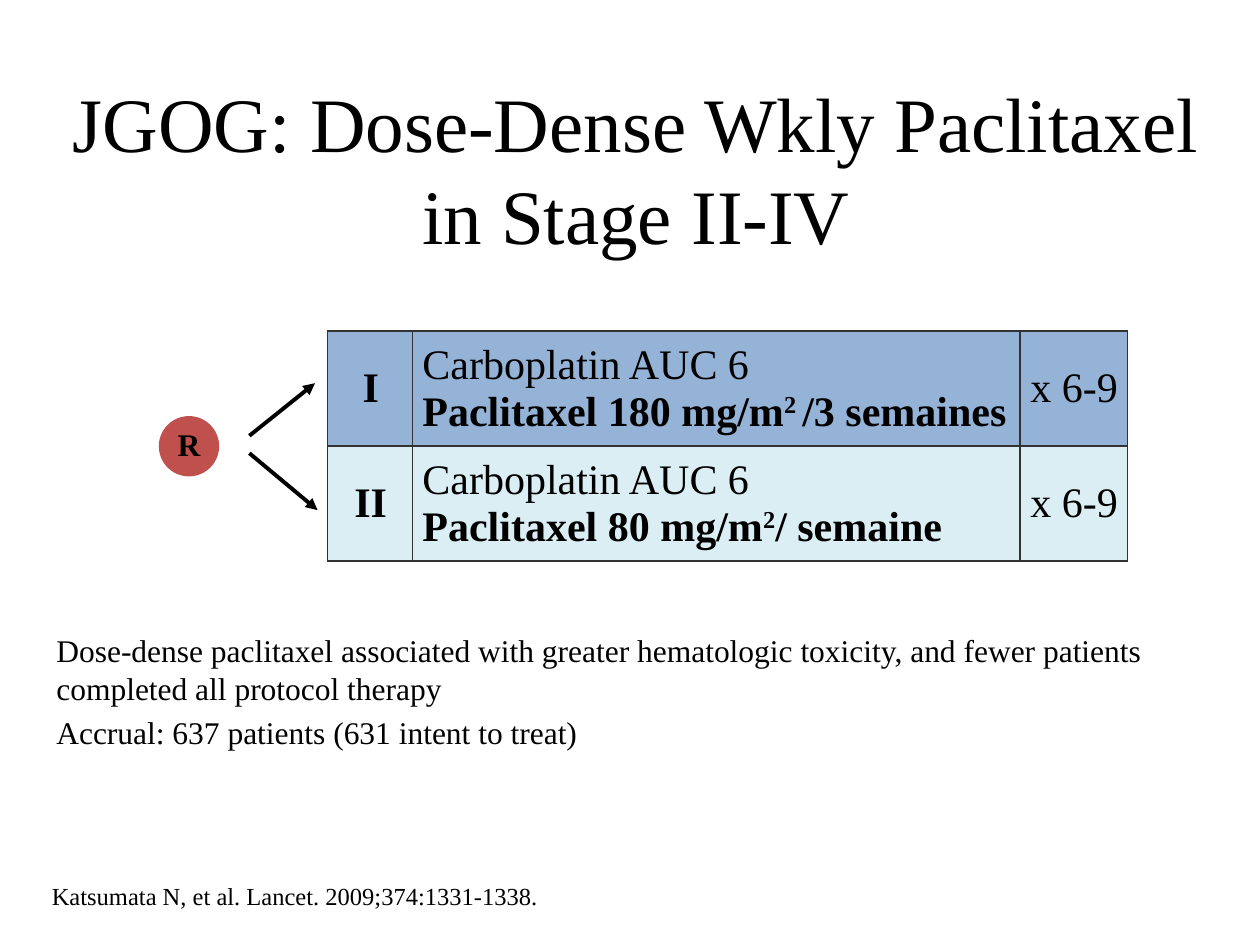
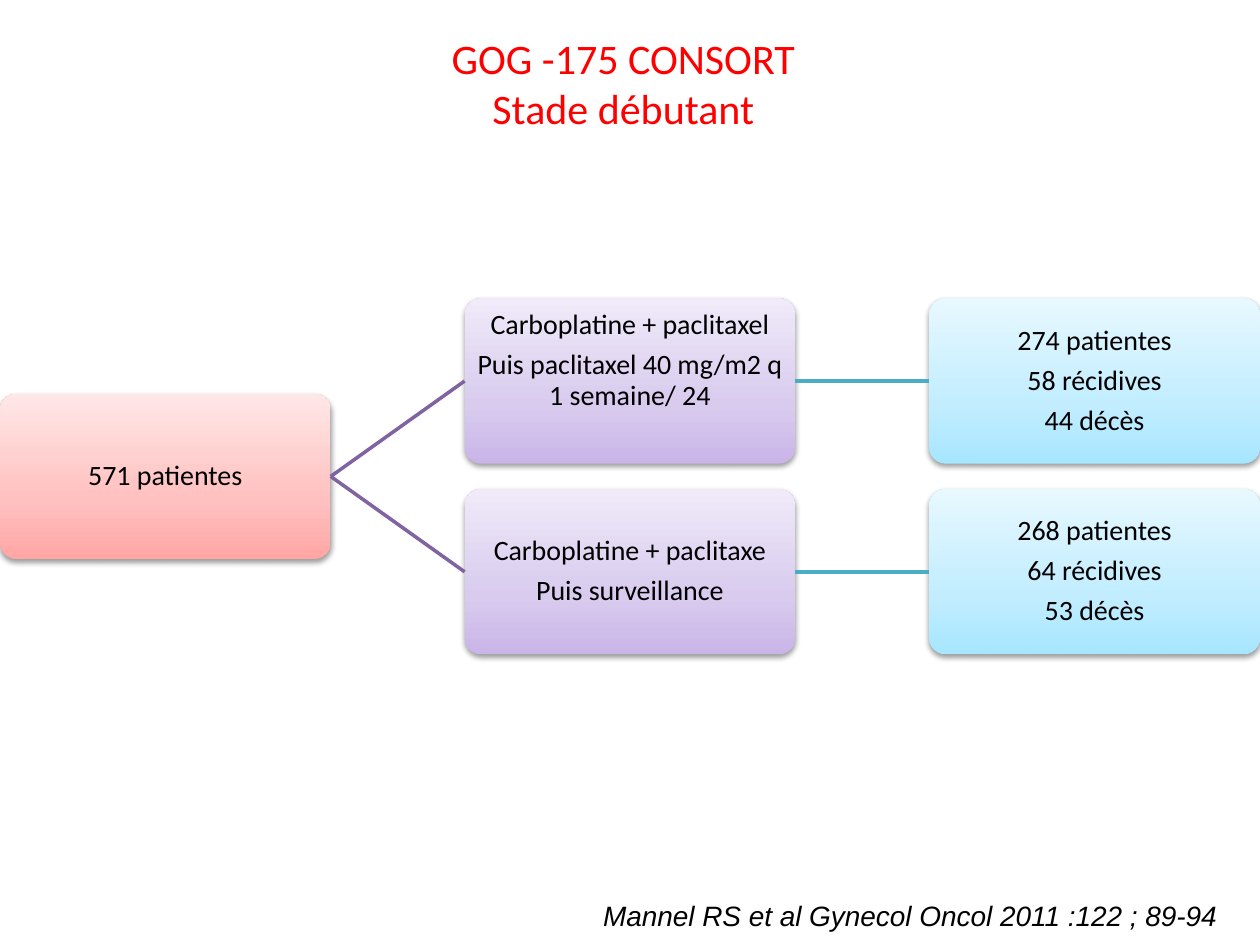
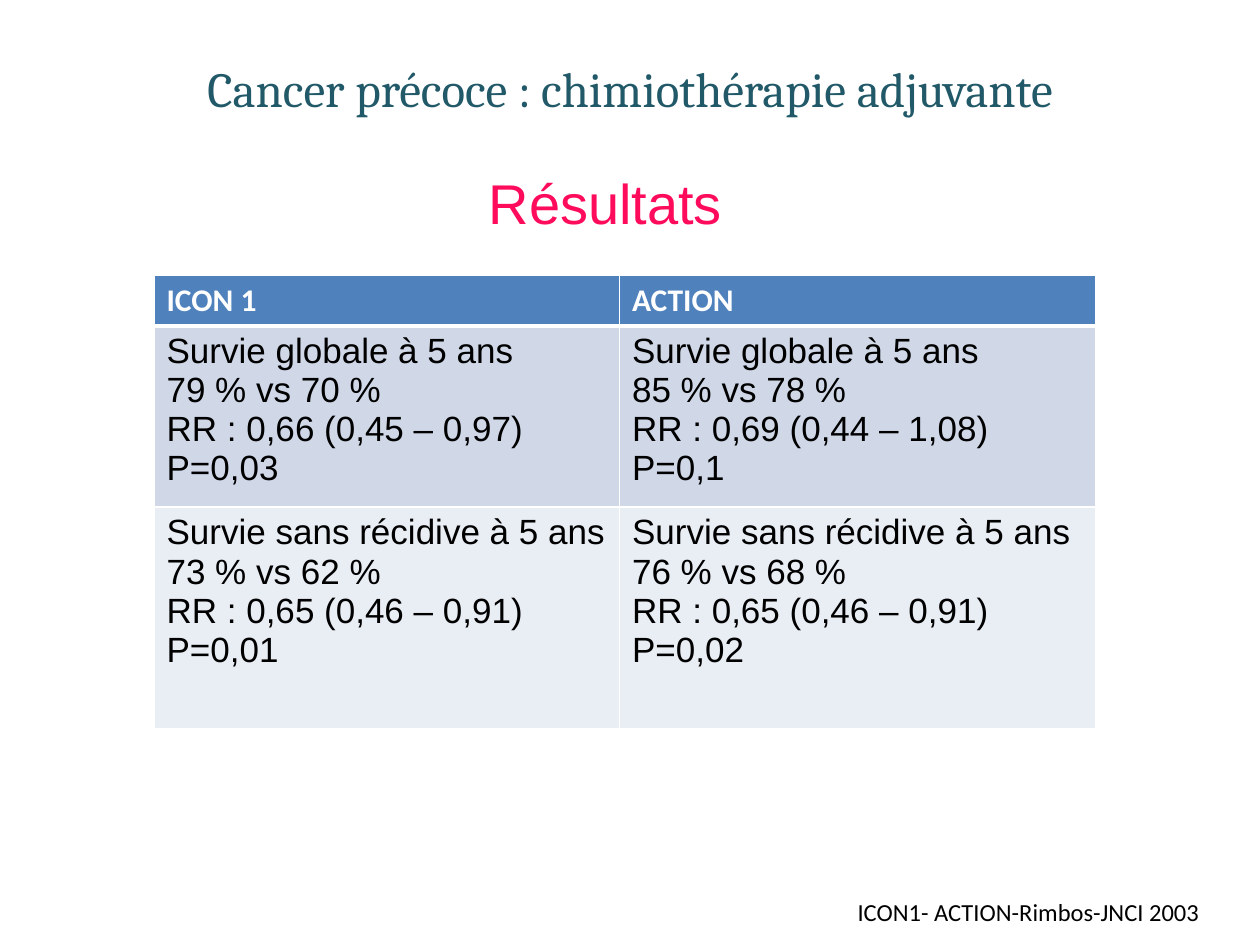
from lxml.etree import SubElement
from pptx import Presentation
from pptx.dml.color import RGBColor
from pptx.enum.shapes import MSO_CONNECTOR, MSO_SHAPE
from pptx.enum.text import MSO_ANCHOR, MSO_AUTO_SIZE, PP_ALIGN
from pptx.oxml import parse_xml
from pptx.oxml.ns import nsdecls, qn
from pptx.util import Pt

SERIF, SANS, PLAIN = "Times New Roman", "Arial", "Calibri"
BLACK, WHITE = "000000", "FFFFFF"
ROSE = ("FFA6A5", "FFC0BF", "FFE7E7")
LILAC = ("C9B5E8", "D8CBEE", "F0EAF9")
SKY = ("A7E6FF", "C1EDFF", "E7F8FF")
CENTER, LEFT = PP_ALIGN.CENTER, PP_ALIGN.LEFT
TOP, MIDDLE = MSO_ANCHOR.TOP, MSO_ANCHOR.MIDDLE


def hue(code):
    return RGBColor.from_string(code)


def write(frame, lines, size=18, face=SERIF, color=BLACK, bold=False,
          italic=False, align=LEFT, gap=0, lead=1.0):
    for i, line in enumerate(lines):
        para = frame.add_paragraph() if i else frame.paragraphs[0]
        para.alignment = align
        para.line_spacing = lead
        para.space_before = Pt(gap if i else 0)
        para.space_after = Pt(0)
        parts = [(line, bold, 0)] if isinstance(line, str) else line
        for text, heavy, lift in parts:
            if text == "\n":
                para.add_line_break()
                continue
            run = para.add_run()
            run.text = text
            font = run.font
            font.size, font.name = Pt(size), face
            font.bold, font.italic = heavy, italic
            font.color.rgb = hue(color)
            if lift:
                run._r.get_or_add_rPr().set("baseline", str(lift * 1000))


def inset(frame, left, top, right, bottom):
    frame.margin_left, frame.margin_top = Pt(left), Pt(top)
    frame.margin_right, frame.margin_bottom = Pt(right), Pt(bottom)


def edge(cell, sides):
    props = cell._tc.get_or_add_tcPr()
    for i, (side, (color, width)) in enumerate(sides.items()):
        props.insert(i, parse_xml(
            f'<a:ln{side} {nsdecls("a")} w="{Pt(width)}"><a:solidFill>'
            f'<a:srgbClr val="{color}"/></a:solidFill></a:ln{side}>'))


class Deck:
    def __init__(self):
        self.show = Presentation()
        self.show.slide_width, self.show.slide_height = Pt(720), Pt(540)

    def page(self, layout):
        self.slide = self.show.slides.add_slide(self.show.slide_layouts[layout])
        self.shapes = self.slide.shapes

    def place(self, shape, box, lines, anchor=TOP, **style):
        shape.left, shape.top, shape.width, shape.height = map(Pt, box)
        frame = shape.text_frame
        frame.auto_size = MSO_AUTO_SIZE.NONE
        frame.word_wrap = True
        frame.vertical_anchor = anchor
        write(frame, lines, **style)

    def title(self, box, lines, **style):
        self.place(self.shapes.title, box, lines, align=CENTER, **style)

    def body(self, box, lines, **style):
        shape = self.slide.placeholders[1]
        self.place(shape, box, lines, **style)
        for para in shape.text_frame.paragraphs:
            props = para._p.get_or_add_pPr()
            props.set("marL", "0")
            props.set("indent", "0")
            SubElement(props, qn("a:buNone"))

    def label(self, box, lines, **style):
        self.place(self.shapes.add_textbox(*map(Pt, box)), box, lines, **style)

    def disc(self, box, text, fill):
        shape = self.shapes.add_shape(MSO_SHAPE.OVAL, *map(Pt, box))
        shape.shadow.inherit = False
        shape.fill.solid()
        shape.fill.fore_color.rgb = hue(fill)
        shape.line.fill.background()
        inset(shape.text_frame, 0, 0, 0, 0)
        self.place(shape, box, [text], MIDDLE, bold=True, align=CENTER, lead=0.9)

    def card(self, box, lines, tones, foot=1):
        shape = self.shapes.add_shape(MSO_SHAPE.ROUNDED_RECTANGLE, *map(Pt, box))
        shape.adjustments[0] = 0.1
        shape.line.fill.background()
        shape.shadow.inherit = False
        props = shape._element.spPr
        stops = "".join(f'<a:gs pos="{pos}000"><a:srgbClr val="{tone}"/></a:gs>'
                        for pos, tone in zip((0, 35, 100), tones))
        props.find(qn("a:prstGeom")).addnext(parse_xml(
            f'<a:gradFill {nsdecls("a")} rotWithShape="1"><a:gsLst>{stops}</a:gsLst>'
            '<a:lin ang="16200000" scaled="0"/></a:gradFill>'))
        props.find(qn("a:effectLst")).append(parse_xml(
            f'<a:outerShdw {nsdecls("a")} blurRad="{Pt(3.1)}" dist="{Pt(1.6)}" '
            'dir="5400000" rotWithShape="0"><a:srgbClr val="000000">'
            '<a:alpha val="38000"/></a:srgbClr></a:outerShdw>'))
        inset(shape.text_frame, 1, 1, 1, foot)
        self.place(shape, box, lines, MIDDLE, size=16, face=PLAIN,
                   align=CENTER, gap=5.6, lead=0.9)
        return shape

    def line(self, ends, color, width, arrow=False):
        link = self.shapes.add_connector(MSO_CONNECTOR.STRAIGHT, *map(Pt, ends))
        link.line.color.rgb = hue(color)
        link.line.width = Pt(width)
        if arrow:
            SubElement(link.line._get_or_add_ln(), qn("a:tailEnd"), type="triangle")
        SubElement(link._element.spPr, qn("a:effectLst"))
        return link

    def join(self, start, stop, color):
        link = self.line((0, 0, 0, 0), color, 2)
        link.begin_connect(start, 3)
        link.end_connect(stop, 1)

    def table(self, spot, cols, rows):
        grid = self.shapes.add_table(len(rows), len(cols), *map(Pt, spot),
                                     Pt(sum(cols)), Pt(sum(rows))).table
        grid.first_row = grid.horz_banding = False
        for col, width in zip(grid.columns, cols):
            col.width = Pt(width)
        for row, height in zip(grid.rows, rows):
            row.height = Pt(height)
        return grid

    def fill(self, cell, lines, tone, sides, **style):
        cell.fill.solid()
        cell.fill.fore_color.rgb = hue(tone)
        edge(cell, sides)
        write(cell.text_frame, lines, **style)


def weekly(deck):
    deck.page(1)
    deck.title((30, 52.5, 667, 87), ["JGOG: Dose-Dense Wkly Paclitaxel in Stage II-IV"],
               size=44, anchor=MIDDLE)
    deck.body((25, 357, 666, 90), [
        "Dose-dense paclitaxel associated with greater hematologic toxicity, "
        "and fewer patients completed all protocol therapy",
        "Accrual: 637 patients (631 intent to treat)"], gap=3.6)
    deck.disc((90.75, 237.75, 34.5, 34.5), "R", "C0504D")
    for ends in ((142.5, 259, 181.5, 291.5), (142.5, 249, 180, 219)):
        deck.line(ends, BLACK, 2.25, arrow=True)
    arms = [
        ("I", "95B3D7", [("Paclitaxel 180 mg/m", True, 0), ("2 ", True, 30),
                         ("/3 semaines", True, 0)]),
        ("II", "DBEEF4", [("Paclitaxel 80 mg/m", True, 0), ("2", True, 30),
                          ("/ semaine", True, 0)])]
    grid = deck.table((187.25, 189.25), (48.5, 347, 61.5), (65.7, 65.7))
    sides = dict.fromkeys("LRTB", ("323235", 1))
    for r, (name, tone, dose) in enumerate(arms):
        drugs = [("Carboplatin AUC 6", False, 0), ("\n", False, 0)] + dose
        texts = ([(name, True, 0)], drugs, "x 6-9")
        for c, text in enumerate(texts):
            cell = grid.cell(r, c)
            inset(cell, 5.7, 5, 5, 5)
            cell.vertical_anchor = MIDDLE
            deck.fill(cell, [text], tone, sides, size=24,
                      align=LEFT if c == 1 else CENTER)
    deck.label((22.5, 502, 375, 26.5),
               ["Katsumata N, et al. Lancet. 2009;374:1331-1338."], size=14, lead=0.9)


def consort(deck):
    deck.page(5)
    deck.label((337.5, 510, 370, 26.5),
               ["Mannel RS et al Gynecol Oncol 2011 :122 ; 89-94"],
               size=16, face=SANS, italic=True)
    deck.title((229.5, 15, 253.5, 65.5), ["GOG -175 CONSORT", "Stade débutant"],
               size=24, face=PLAIN, color="FF0000")
    wide, high, top = 189, 94.5, 170.5
    across, down = 265.5, 109
    root = deck.card((0, top + down / 2, wide, high), ["571 patientes"], ROSE)
    arms = [
        (["Carboplatine + paclitaxel", "Puis paclitaxel 40 mg/m2 q 1 semaine/ 24"],
         ["274 patientes", "58 récidives", "44 décès"], 24),
        (["Carboplatine + paclitaxe", "Puis surveillance"],
         ["268 patientes", "64 récidives", "53 décès"], 1)]
    for i, (care, fate, foot) in enumerate(arms):
        y = top + i * down
        arm = deck.card((across, y, wide, high), care, LILAC, foot)
        end = deck.card((2 * across, y, wide, high), fate, SKY)
        deck.join(root, arm, "8064A2")
        deck.join(arm, end, "4BACC6")


def results(deck):
    deck.page(5)
    deck.label((483, 509, 230, 24), ["ICON1- ACTION-Rimbos-JNCI 2003"],
               size=14, face=PLAIN)
    deck.title((54, 30, 612, 47.5), ["Cancer précoce : chimiothérapie adjuvante"],
               size=28, face="Cambria", color="215968")
    deck.label((139, 93, 414, 46), ["Résultats"], size=32, face=SANS,
               color="FF0B5C", align=CENTER)
    overall, free = "Survie globale à 5 ans", "Survie sans récidive à 5 ans"
    head = dict(size=18, face=PLAIN, color=WHITE, bold=True)
    text = dict(size=20, face=SANS)
    rows = [
        ("4F81BD", head, 1, 3, [["ICON 1"], ["ACTION"]]),
        ("D0D8E8", text, 3, 1, [
            [overall, "79 % vs 70 %", "RR : 0,66 (0,45 – 0,97)", "P=0,03"],
            [overall, "85 % vs 78 %", "RR : 0,69 (0,44 – 1,08)", "P=0,1"]]),
        ("E9EDF4", text, 1, 1, [
            [free, "73 % vs 62 %", "RR : 0,65 (0,46 – 0,91)", "P=0,01"],
            [free, "76 % vs 68 %", "RR : 0,65 (0,46 – 0,91)", "P=0,02"]])]
    grid = deck.table((88, 157), (266, 272), (28.5, 103.5, 127))
    for r, (tone, style, above, below, cells) in enumerate(rows):
        sides = {side: (WHITE, width)
                 for side, width in zip("LRTB", (1, 1, above, below))}
        for c, lines in enumerate(cells):
            deck.fill(grid.cell(r, c), lines, tone, sides, **style)


def main():
    deck = Deck()
    for build in (weekly, consort, results):
        build(deck)
    deck.show.save("out.pptx")


if __name__ == "__main__":
    main()
